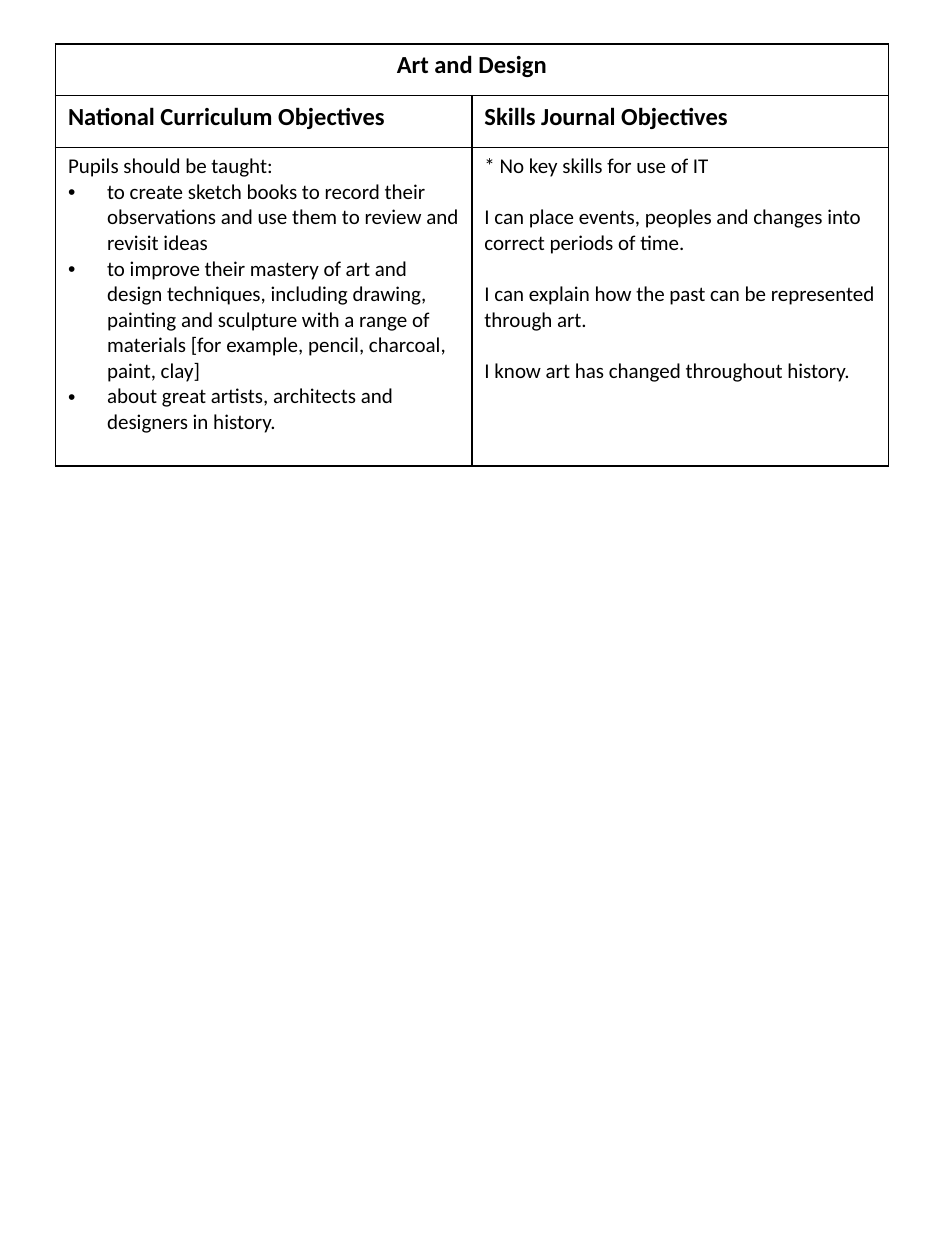
from lxml import etree
from pptx import Presentation
from pptx.dml.color import RGBColor
from pptx.enum import text
from pptx.oxml import ns
from pptx.util import Inches, Pt

# Content
TITLE = "Art and Design"
HEADINGS = ["National Curriculum Objectives", "Skills Journal Objectives"]
CURRICULUM_INTRO = "Pupils should be taught:"
CURRICULUM_POINTS = [
    "to create sketch books to record their observations and use them to review and revisit ideas",
    "to improve their mastery of art and design techniques, including drawing, painting and "
    "sculpture with a range of materials [for example, pencil, charcoal, paint, clay]",
    "about great artists, architects and designers in history.",
]
SKILLS = [
    "* No key skills for use of IT\u00a0",
    "I can place events, peoples and changes into correct periods of time.",
    "I can explain how the past can be represented through art.",
    "I know art has changed throughout history.",
]

# Layout and style
LEFT, TOP, WIDTH = 0.44, 0.35, 6.61
ROW_HEIGHTS = [0.41, 0.41, 2.53]
BULLET_INDENT = 0.31
SKILL_GAP = 14.65
FONT, BLACK = "Calibri", "000000"


def colour(value):
    return RGBColor.from_string(value)


def write(cell, lines, size=12, bold=False):
    cell.text = "\n".join(lines)
    for paragraph in cell.text_frame.paragraphs:
        font = paragraph.font
        font.name, font.size, font.bold = FONT, Pt(size), bold
        font.color.rgb = colour(BLACK)
    return cell.text_frame.paragraphs


def add_bullet(paragraph):
    properties = paragraph._p.get_or_add_pPr()
    properties.set("marL", str(Inches(BULLET_INDENT)))
    properties.set("indent", str(-Inches(BULLET_INDENT)))
    bullet_font = etree.Element(ns.qn("a:buFont"), typeface="Arial")
    bullet = etree.Element(ns.qn("a:buChar"), char="•")
    properties.insert_element_before(bullet_font, "a:tabLst", "a:defRPr", "a:extLst")
    bullet_font.addnext(bullet)


def add_borders(cell, width=1):
    properties = cell._tc.get_or_add_tcPr()
    for index, side in enumerate(("lnL", "lnR", "lnT", "lnB")):
        line = etree.Element(ns.qn(f"a:{side}"), w=str(Pt(width)))
        fill = etree.SubElement(line, ns.qn("a:solidFill"))
        etree.SubElement(fill, ns.qn("a:srgbClr"), val=BLACK)
        properties.insert(index, line)


presentation = Presentation()
presentation.slide_width, presentation.slide_height = Inches(7.5), Inches(10)
slide = presentation.slides.add_slide(presentation.slide_layouts[6])

# Table grid
table = slide.shapes.add_table(
    len(ROW_HEIGHTS), len(HEADINGS),
    Inches(LEFT), Inches(TOP), Inches(WIDTH), Inches(sum(ROW_HEIGHTS)),
).table
table.first_row = table.horz_banding = False
for row, height in zip(table.rows, ROW_HEIGHTS):
    row.height = Inches(height)
for cell in table.iter_cells():
    cell.fill.background()
    add_borders(cell)

# Title and headings
table.cell(0, 0).merge(table.cell(0, len(HEADINGS) - 1))
write(table.cell(0, 0), [TITLE], 14, True)[0].alignment = text.PP_ALIGN.CENTER
for column, heading in enumerate(HEADINGS):
    write(table.cell(1, column), [heading], 14, True)

# Objectives
for paragraph in write(table.cell(2, 0), [CURRICULUM_INTRO, *CURRICULUM_POINTS])[1:]:
    add_bullet(paragraph)
for paragraph in write(table.cell(2, 1), SKILLS)[1:]:
    paragraph.space_before = Pt(SKILL_GAP)

presentation.save("out.pptx")
